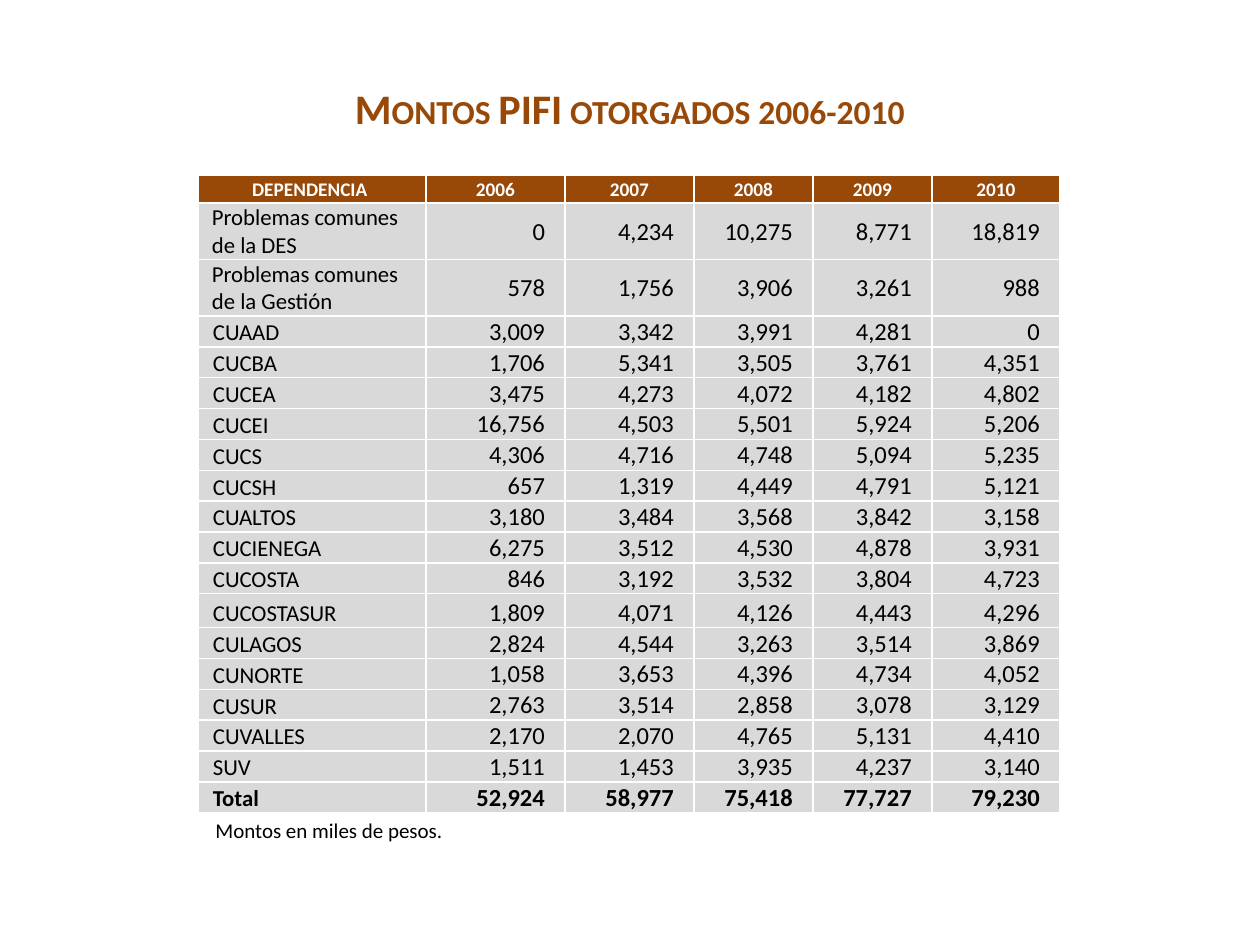
from pptx import Presentation
from pptx import util as u
from pptx.dml.color import RGBColor
from pptx.enum import text
from pptx.oxml import parse_xml
from pptx.oxml.ns import nsdecls

BROWN = RGBColor(0x98, 0x48, 0x07)
GREY = RGBColor(0xD9, 0xD9, 0xD9)
WHITE = RGBColor(0xFF, 0xFF, 0xFF)
BLACK = RGBColor(0, 0, 0)
FACE = "Calibri"
LEFT, MID, RIGHT = text.PP_ALIGN.LEFT, text.PP_ALIGN.CENTER, text.PP_ALIGN.RIGHT

COLS = [228, 139, 129, 119, 119, 128]
HEAD = ["DEPENDENCIA ", "2006", "2007", "2008", "2009", "2010"]
COMMON = [
    ("Problemas comunes de la DES", 0, 4234, 10275, 8771, 18819),
    ("Problemas comunes de la Gestión", 578, 1756, 3906, 3261, 988),
]
CENTERS = [
    ("CUAAD", 3009, 3342, 3991, 4281, 0),
    ("CUCBA", 1706, 5341, 3505, 3761, 4351),
    ("CUCEA", 3475, 4273, 4072, 4182, 4802),
    ("CUCEI", 16756, 4503, 5501, 5924, 5206),
    ("CUCS", 4306, 4716, 4748, 5094, 5235),
    ("CUCSH", 657, 1319, 4449, 4791, 5121),
    ("CUALTOS", 3180, 3484, 3568, 3842, 3158),
    ("CUCIENEGA", 6275, 3512, 4530, 4878, 3931),
    ("CUCOSTA", 846, 3192, 3532, 3804, 4723),
    ("CUCOSTASUR", 1809, 4071, 4126, 4443, 4296),
    ("CULAGOS", 2824, 4544, 3263, 3514, 3869),
    ("CUNORTE", 1058, 3653, 4396, 4734, 4052),
    ("CUSUR", 2763, 3514, 2858, 3078, 3129),
    ("CUVALLES", 2170, 2070, 4765, 5131, 4410),
    ("SUV", 1511, 1453, 3935, 4237, 3140),
]
TOTAL = ("Total", 52924, 58977, 75418, 77727, 79230)


def px(n):
    return u.Emu(round(n * 914400 / 126))


def style(para, size, color, bold=False, align=LEFT):
    para.alignment = align
    font = para.font
    font.name, font.size, font.bold = FACE, u.Pt(size), bold
    font.color.rgb = color


def add_text(slide, box, words, wrap=True):
    shape = slide.shapes.add_textbox(*map(px, box))
    frame = shape.text_frame
    frame.word_wrap = wrap
    para = frame.paragraphs[0]
    para.add_run().text = words
    return frame, para


def add_title(slide, box):
    para = add_text(slide, box, "Montos PIFI otorgados 2006-2010")[1]
    style(para, 24, BROWN, True, MID)
    para.runs[0]._r.get_or_add_rPr().set("cap", "small")


def add_note(slide, box):
    frame, para = add_text(slide, box, "Montos en miles de pesos.", False)
    frame.auto_size = text.MSO_AUTO_SIZE.SHAPE_TO_FIT_TEXT
    style(para, 12, BLACK)


def edge(cell):
    """Draw white one-point borders on all four sides."""
    props = cell._tc.get_or_add_tcPr()
    for spot, side in enumerate(("lnL", "lnR", "lnT", "lnB")):
        props.insert(spot, parse_xml(
            f'<a:{side} {nsdecls("a")} w="12700"><a:solidFill>'
            f'<a:srgbClr val="{WHITE}"/></a:solidFill></a:{side}>'))


def fill_cell(cell, words, fill, left, right, anchor):
    cell.fill.solid()
    cell.fill.fore_color.rgb = fill
    edge(cell)
    cell.margin_left, cell.margin_right = px(left), px(right)
    cell.margin_top, cell.margin_bottom = px(1), 0
    cell.vertical_anchor = anchor
    para = cell.text_frame.paragraphs[0]
    para.add_run().text = words
    return para


def add_grants(slide, box):
    rows = [HEAD, *COMMON, *CENTERS, TOTAL]
    table = slide.shapes.add_table(len(rows), len(COLS), *map(px, box)).table
    for col, width in zip(table.columns, COLS):
        col.width = px(width)
    for r, row in enumerate(rows):
        common, total = row in COMMON, row is TOTAL
        tall = 28 if r == 0 else 56 if common else 34 if row[0] == "CUCOSTASUR" else 30
        table.rows[r].height = px(tall)
        anchor = text.MSO_ANCHOR.MIDDLE if r == 0 or common else text.MSO_ANCHOR.BOTTOM
        for c, value in enumerate(row):
            cell = table.cell(r, c)
            if r == 0:
                para = fill_cell(cell, value, BROWN, 1, 1, anchor)
                style(para, 11, WHITE, True, MID)
            elif c:
                para = fill_cell(cell, f"{value:,}", GREY, 1, 20, anchor)
                style(para, 14, BLACK, total, RIGHT)
            else:
                left, right = (1, 1) if common else (15, 0)
                para = fill_cell(cell, value, GREY, left, right, anchor)
                if common:
                    props = para._p.get_or_add_pPr()
                    props.set("marL", str(px(13)))
                    props.set("indent", "0")
                style(para, 13, BLACK, total)


def main():
    deck = Presentation()
    deck.slide_width, deck.slide_height = px(1260), px(945)
    slide = deck.slides.add_slide(deck.slide_layouts[6])
    add_grants(slide, (198, 175, 862, 634))
    add_title(slide, (63, 76, 1134, 50))
    add_note(slide, (203, 811, 256, 38))
    deck.save("out.pptx")


if __name__ == "__main__":
    main()
